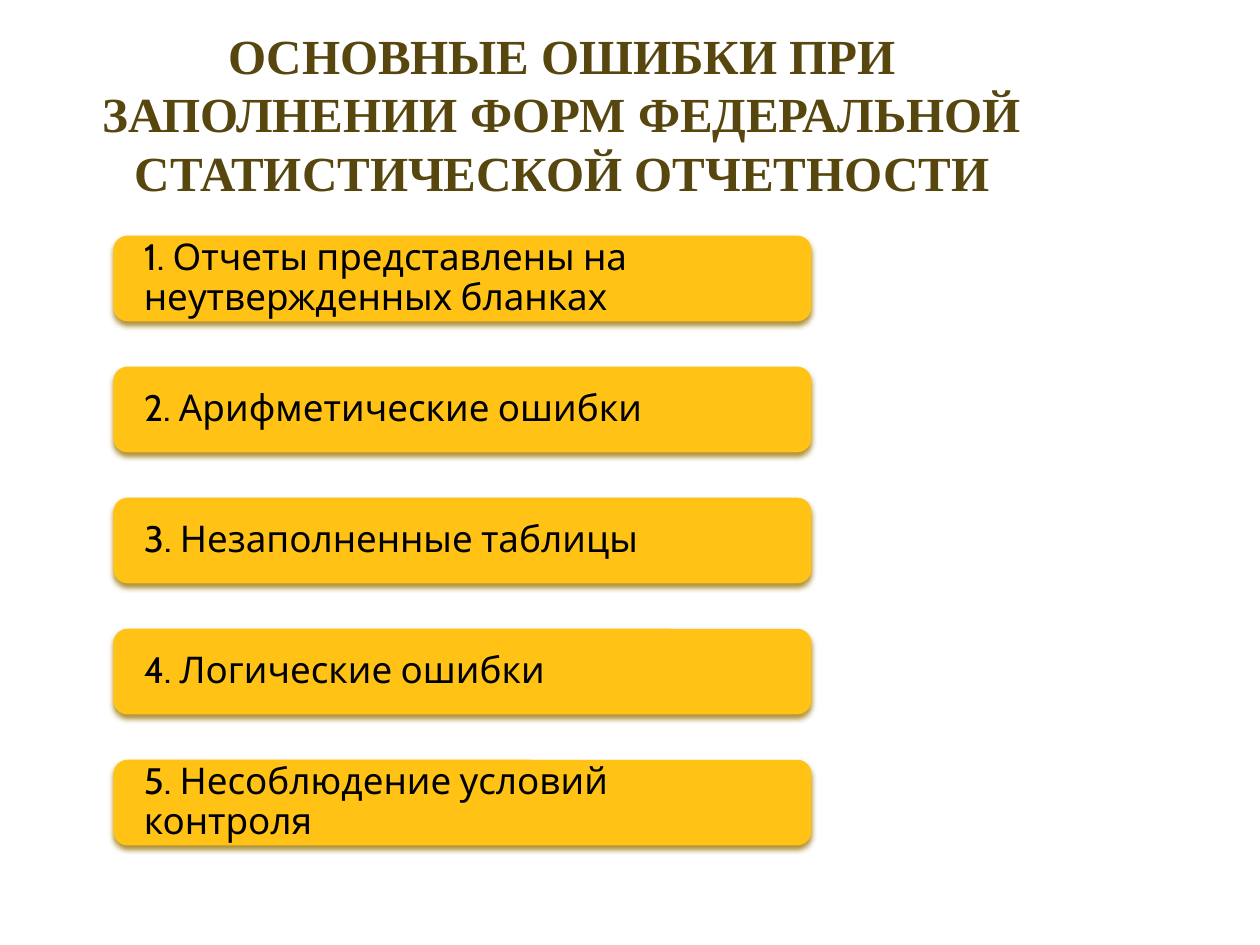
from dataclasses import dataclass

from lxml.etree import SubElement as Sub
from pptx import Presentation
from pptx.dml.color import RGBColor as Rgb
from pptx.enum.shapes import MSO_SHAPE as Kind
from pptx.enum.text import MSO_ANCHOR as Anchor, MSO_AUTO_SIZE as Auto, PP_ALIGN as Align
from pptx.oxml.ns import qn
from pptx.util import Inches, Pt

BROWN = Rgb(0x58, 0x46, 0x0F)
GOLD = Rgb(0xFF, 0xC2, 0x15)
SHADE = Rgb(0x9D, 0x78, 0x0D)
BLACK = Rgb(0, 0, 0)

WIDE, HIGH = Inches(10), Inches(7.5)
HEAD = "ОСНОВНЫЕ ОШИБКИ ПРИ ЗАПОЛНЕНИИ ФОРМ ФЕДЕРАЛЬНОЙ СТАТИСТИЧЕСКОЙ ОТЧЕТНОСТИ"
FAULTS = (
    "Отчеты представлены на неутвержденных бланках",
    "Арифметические ошибки",
    "Незаполненные таблицы",
    "Логические ошибки",
    "Несоблюдение условий контроля",
)


@dataclass(frozen=True)
class Grid:
    left: int
    top: int
    width: int
    height: int
    step: int

    def row(self, index: int) -> tuple[int, int, int, int]:
        return self.left, self.top + index * self.step, self.width, self.height


BARS = Grid(Inches(0.9), Inches(1.87), Inches(5.54), Inches(0.68), Inches(1.04))


def set_box(frame, anchor: Anchor, side: float) -> None:
    frame.word_wrap = True
    frame.auto_size = Auto.NONE
    frame.vertical_anchor = anchor
    frame.margin_left = frame.margin_right = Inches(side)
    frame.margin_top = frame.margin_bottom = 0


def set_font(font, name: str, size: float, color: Rgb, bold: bool = False) -> None:
    font.name, font.size, font.bold = name, Pt(size), bold
    font.color.rgb = color


def add_shade(shape) -> None:
    shape.shadow.inherit = False
    effects = shape._element.spPr.find(qn("a:effectLst"))
    shade = Sub(effects, qn("a:outerShdw"), blurRad=str(Pt(3.1)), dist=str(Pt(2)),
                dir="5400000", algn="ctr", rotWithShape="0")
    color = Sub(shade, qn("a:srgbClr"), val=str(SHADE))
    Sub(color, qn("a:alpha"), val="83000")


def add_title(slide, text: str) -> None:
    title = slide.shapes.title
    title.left, title.top = Inches(0.5), Inches(0.35)
    title.width, title.height = Inches(7.92), Inches(1.25)
    frame = title.text_frame
    set_box(frame, Anchor.BOTTOM, 0.05)
    frame.text = text
    para = frame.paragraphs[0]
    para.alignment = Align.CENTER
    set_font(para.font, "Times New Roman", 28, BROWN, True)


def add_bar(slide, index: int, text: str) -> None:
    bar = slide.shapes.add_shape(Kind.ROUNDED_RECTANGLE, *BARS.row(index))
    bar.fill.solid()
    bar.fill.fore_color.rgb = GOLD
    bar.line.fill.background()
    add_shade(bar)
    frame = bar.text_frame
    set_box(frame, Anchor.MIDDLE, 0.21)
    frame.text = f"{index + 1}. {text}"
    para = frame.paragraphs[0]
    para.alignment = Align.LEFT
    para.line_spacing = 0.9
    set_font(para.font, "Cabin", 21, BLACK)


def main() -> None:
    deck = Presentation()
    deck.slide_width, deck.slide_height = WIDE, HIGH
    slide = deck.slides.add_slide(deck.slide_layouts[5])
    add_title(slide, HEAD)
    for index, text in enumerate(FAULTS):
        add_bar(slide, index, text)
    deck.save("out.pptx")


if __name__ == "__main__":
    main()
